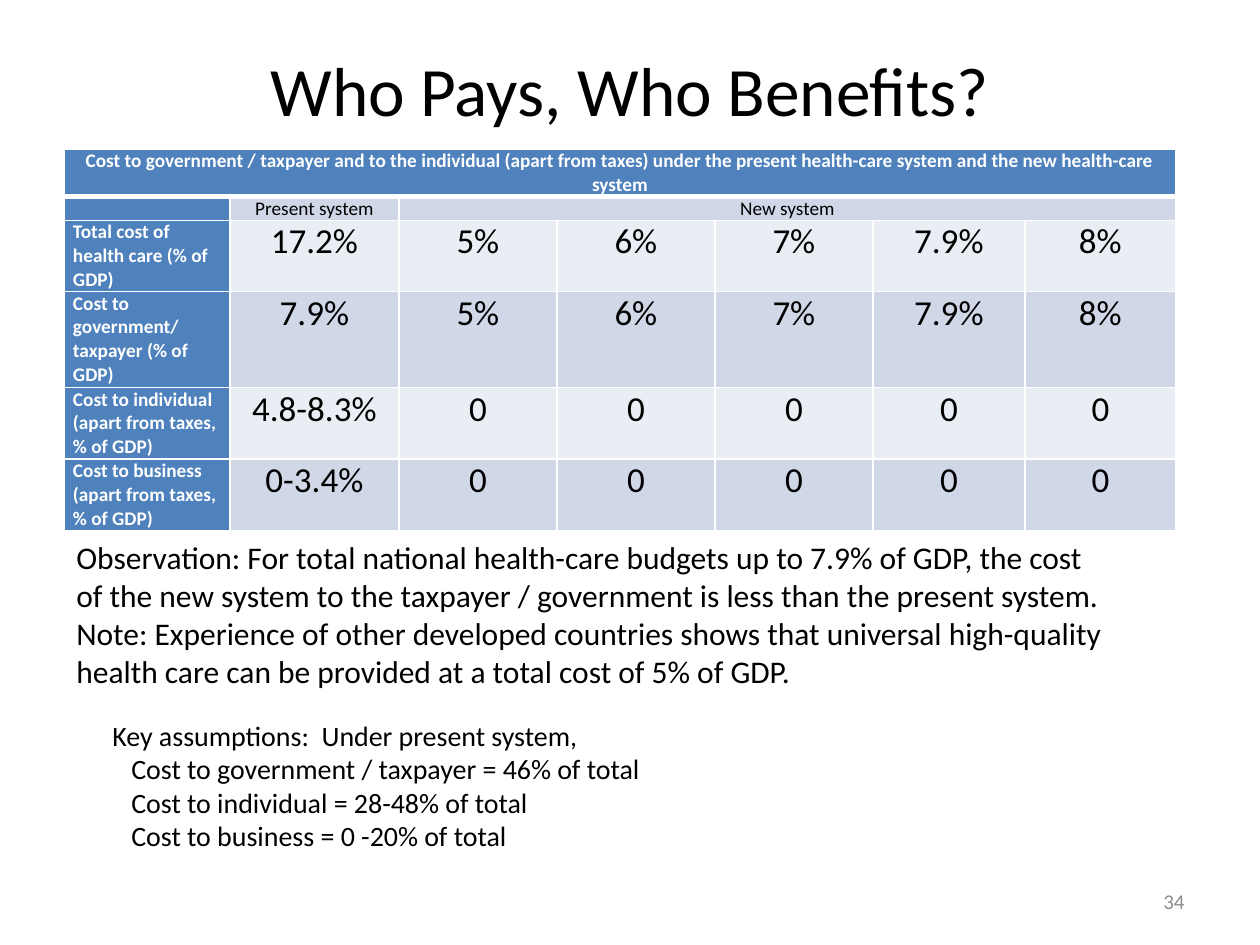
import pptx
import pptx.util
import pptx.dml.color
import pptx.enum.text
import pptx.oxml.ns
import lxml.etree

TITLE = "Who Pays, Who Benefits?"
CAPTION = ("Cost to government / taxpayer and to the individual (apart from taxes) "
           "under the present health-care system and the new health-care system")
ROWS = [
    [CAPTION] + [""] * 6,
    ["", "Present system", "New system", "", "", "", ""],
    ["Total cost of health care (% of GDP)", "17.2%", "5%", "6%", "7%", "7.9%", "8%"],
    ["Cost to government/ taxpayer (% of GDP)", "7.9%", "5%", "6%", "7%", "7.9%", "8%"],
    ["Cost to individual (apart from taxes, % of GDP)", "4.8-8.3%"] + ["0"] * 5,
    ["Cost to business (apart from taxes, % of GDP)", "0-3.4%"] + ["0"] * 5,
]
MERGES = [((0, 0), (0, 6)), ((1, 2), (1, 6))]
COLUMN_WIDTHS = [166, 169, 158, 158, 158, 152, 151]
ROW_HEIGHTS = [47, 23, 71, 96, 71, 71]
OBSERVATION = [
    ("Observation: For total national health-care budgets up to 7.9% of GDP, the cost of the "
     "new system to the taxpayer / government is less than the present system.", 0),
    ("Note: Experience of other developed countries shows that universal high-quality "
     "health care can be provided at a total cost of 5% of GDP.", 0),
]
ASSUMPTIONS = [
    ("Key assumptions:  Under present system,", 0),
    ("Cost to government / taxpayer = 46% of total", 19),
    ("Cost to individual = 28-48% of total", 19),
    ("Cost to business = 0 -20% of total", 19),
]
BOXES = [
    (OBSERVATION, (64, 532, 1061, 165), 18, "000000", "LEFT", "TOP"),
    (ASSUMPTIONS, (100, 712, 1034, 149), 16, "000000", "LEFT", "TOP"),
    ([("34", 0)], (903, 876, 294, 50), 12, "8C8C8C", "RIGHT", "MIDDLE"),
]
BLUE, BANDS = "4F81BD", ["E9EDF4", "D0D8E8"]


def px(value):
    return pptx.util.Emu(value * 914400 // 126)


def colour(value):
    return pptx.dml.color.RGBColor.from_string(value)


def apply(target, values):
    for name, value in values.items():
        setattr(target, name, value)


def write(para, text, size, shade, align, bold=False):
    para.alignment = getattr(pptx.enum.text.PP_ALIGN, align)
    span = para.add_run()
    span.text = text
    apply(span.font, {"name": "Calibri", "size": pptx.util.Pt(size), "bold": bold})
    span.font.color.rgb = colour(shade)


def place(shape, area):
    apply(shape, dict(zip(("left", "top", "width", "height"), map(px, area))))


def add_borders(cell, bottom):
    properties = cell._tc.get_or_add_tcPr()
    tag = pptx.oxml.ns.qn
    for side, points in (("L", 1), ("R", 1), ("T", 1), ("B", bottom)):
        line = lxml.etree.SubElement(properties, tag("a:ln" + side), w=str(points * 12700))
        fill = lxml.etree.SubElement(line, tag("a:solidFill"))
        lxml.etree.SubElement(fill, tag("a:srgbClr"), val="FFFFFF")


def fill_cell(cell, text, row, column):
    header = row == 0 or column == 0
    apply(cell, {"margin_left": px(9), "margin_right": px(9),
                 "margin_top": 0, "margin_bottom": 0})
    add_borders(cell, 3 if row == 0 else 1)
    cell.fill.solid()
    cell.fill.fore_color.rgb = colour(BLUE if header else BANDS[row % 2])
    para = cell.text_frame.paragraphs[0]
    if text:
        write(para, text, 11 if header or row == 1 else 20,
              "FFFFFF" if header else "000000",
              "LEFT" if row and header else "CENTER", header)
    else:
        lxml.etree.SubElement(para._p, pptx.oxml.ns.qn("a:endParaRPr"), sz="1100")


def add_cost_table(page):
    table = page.shapes.add_table(
        len(ROWS), len(COLUMN_WIDTHS), px(64), px(149),
        px(sum(COLUMN_WIDTHS)), px(sum(ROW_HEIGHTS))).table
    for column, width in zip(table.columns, COLUMN_WIDTHS):
        column.width = px(width)
    for line, height in zip(table.rows, ROW_HEIGHTS):
        line.height = px(height)
    for row, texts in enumerate(ROWS):
        for column, text in enumerate(texts):
            fill_cell(table.cell(row, column), text, row, column)
    for start, end in MERGES:
        table.cell(*start).merge(table.cell(*end))


def add_box(page, lines, area, size, shade, align, anchor):
    box = page.shapes.add_textbox(*map(px, area))
    frame = box.text_frame
    apply(frame, {"word_wrap": True,
                  "vertical_anchor": getattr(pptx.enum.text.MSO_ANCHOR, anchor)})
    for index, (text, indent) in enumerate(lines):
        para = frame.add_paragraph() if index else frame.paragraphs[0]
        write(para, text, size, shade, align)
        if indent:
            para._p.get_or_add_pPr().set("marL", str(px(indent)))


def main():
    deck = pptx.Presentation()
    apply(deck, {"slide_width": px(1260), "slide_height": px(945)})
    page = deck.slides.add_slide(deck.slide_layouts[5])
    title = page.shapes.title
    place(title, (63, 38, 1134, 102))
    apply(title.text_frame, {"vertical_anchor": pptx.enum.text.MSO_ANCHOR.MIDDLE,
                             "auto_size": pptx.enum.text.MSO_AUTO_SIZE.NONE})
    write(title.text_frame.paragraphs[0], TITLE, 39.6, "000000", "CENTER")
    add_cost_table(page)
    for box in BOXES:
        add_box(page, *box)
    deck.save("out.pptx")


if __name__ == "__main__":
    main()
